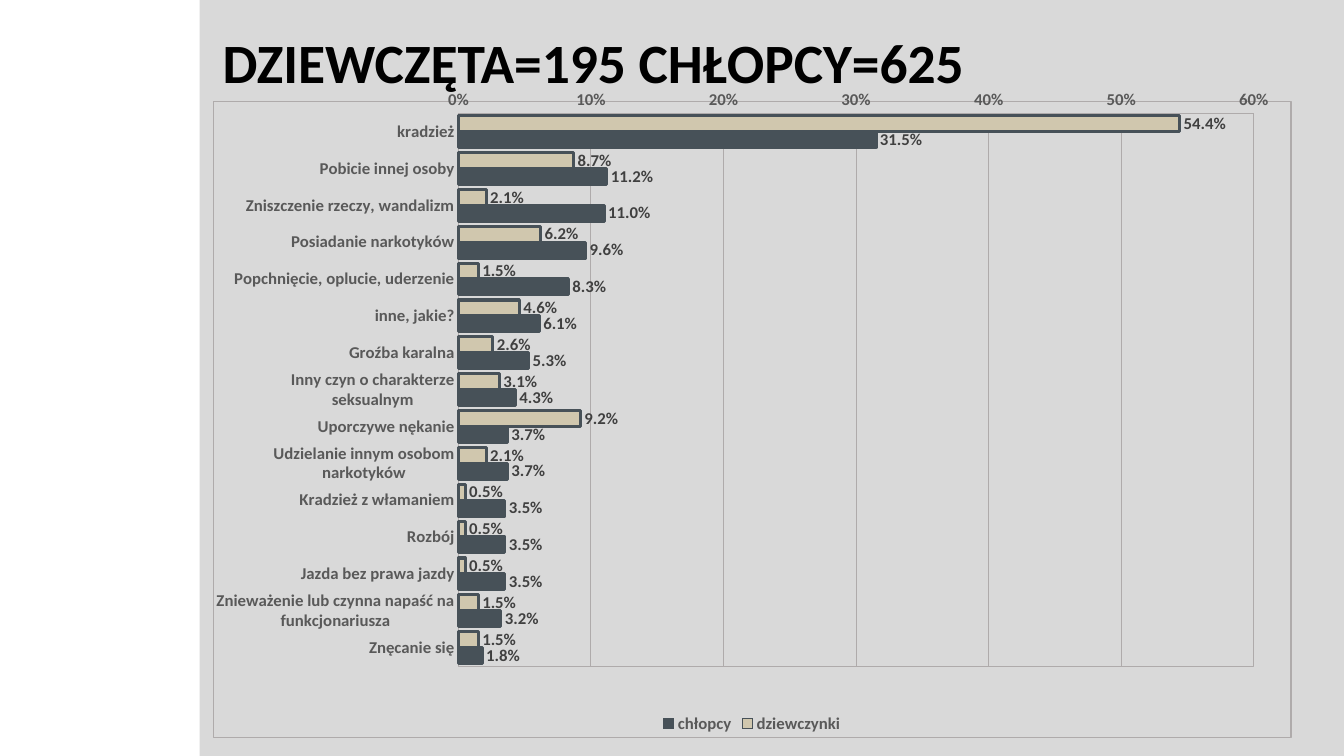
"""Build the slide comparing offences by girls and boys."""
import lxml.etree
import pptx
import pptx.chart.data
import pptx.dml.color
import pptx.enum.chart
import pptx.enum.shapes
import pptx.enum.text
import pptx.oxml
import pptx.oxml.ns
import pptx.util

Inches = pptx.util.Inches
Pt = pptx.util.Pt
FONT = "Calibri"
GRID, GREY, DARK, SAND = "AFABAB", "595959", "475158", "D0C7AE"
OFFENCES = [
    ("kradzież", 0.544, 0.315),
    ("Pobicie innej osoby", 0.087, 0.112),
    ("Zniszczenie rzeczy, wandalizm", 0.021, 0.11),
    ("Posiadanie narkotyków", 0.062, 0.096),
    ("Popchnięcie, oplucie, uderzenie", 0.015, 0.083),
    ("inne, jakie?", 0.046, 0.061),
    ("Groźba karalna", 0.026, 0.053),
    ("Inny czyn o charakterze seksualnym", 0.031, 0.043),
    ("Uporczywe nękanie", 0.092, 0.037),
    ("Udzielanie innym osobom narkotyków", 0.021, 0.037),
    ("Kradzież z włamaniem", 0.005, 0.035),
    ("Rozbój", 0.005, 0.035),
    ("Jazda bez prawa jazdy", 0.005, 0.035),
    ("Znieważenie lub czynna napaść na funkcjonariusza", 0.015, 0.032),
    ("Znęcanie się", 0.015, 0.018),
]


def rgb(color):
    """Return the colour for a hex string."""
    return pptx.dml.color.RGBColor.from_string(color)


def set_font(font, size, color):
    """Apply the bold slide font."""
    font.name = FONT
    font.size = Pt(size)
    font.bold = True
    font.color.rgb = rgb(color)


def set_line(line, color, width):
    """Apply a solid line."""
    line.color.rgb = rgb(color)
    line.width = Pt(width)


def add_panel(s):
    """Add the grey panel right of the white margin."""
    sp = s.shapes.add_shape(pptx.enum.shapes.MSO_SHAPE.RECTANGLE,
                            Inches(1.98), Inches(-0.02), Inches(11.35), Inches(7.52))
    sp.shadow.inherit = False
    sp.fill.solid()
    sp.fill.fore_color.rgb = rgb("D9D9D9")
    sp.line.fill.background()


def add_title(s, text):
    """Add the heading with the group sizes."""
    sp = s.shapes.add_textbox(Inches(2.11), Inches(0.4), Inches(10.31), Inches(0.49))
    tf = sp.text_frame
    tf.word_wrap = True
    tf.vertical_anchor = pptx.enum.text.MSO_ANCHOR.MIDDLE
    tf.text = text
    p = tf.paragraphs[0]
    p.line_spacing = 0.9
    set_font(p.runs[0].font, 39.6, "000000")


def border_xml():
    """Return shape properties with no fill and a thin border."""
    return pptx.oxml.parse_xml(
        f'<c:spPr {pptx.oxml.ns.nsdecls("c", "a")}><a:noFill/><a:ln w="{Pt(0.75)}">'
        f'<a:solidFill><a:srgbClr val="{GRID}"/></a:solidFill></a:ln></c:spPr>')


def frame_chart(chart):
    """Border the chart and place its plot area."""
    chart.element.xpath("c:chart")[0].addnext(border_xml())
    plot_area = chart.element.xpath("c:chart/c:plotArea")[0]
    for old in plot_area.xpath("c:layout"):
        plot_area.remove(old)
    layout = pptx.oxml.parse_xml(
        f'<c:layout {pptx.oxml.ns.nsdecls("c")}><c:manualLayout/></c:layout>')
    settings = [("layoutTarget", "inner"), ("xMode", "edge"), ("yMode", "edge"),
                ("x", "0.2275"), ("y", "0.019"), ("w", "0.738"), ("h", "0.869")]
    for tag, value in settings:
        lxml.etree.SubElement(layout[0], pptx.oxml.ns.qn(f"c:{tag}")).set("val", value)
    plot_area.insert(0, layout)
    plot_area.append(border_xml())


def style_axes(chart):
    """Format both axes and the gridlines."""
    for axis in (chart.category_axis, chart.value_axis):
        axis.major_tick_mark = axis.minor_tick_mark = pptx.enum.chart.XL_TICK_MARK.NONE
        set_font(axis.tick_labels.font, 12, GREY)
        set_line(axis.format.line, GRID, 0.75)
    chart.category_axis.reverse_order = True
    chart.category_axis.crosses = pptx.enum.chart.XL_AXIS_CROSSES.MAXIMUM
    axis = chart.value_axis
    axis.minimum_scale, axis.maximum_scale, axis.major_unit = 0, 0.6, 0.1
    axis.tick_labels.number_format = "0%"
    axis.tick_labels.number_format_is_linked = False
    axis.has_major_gridlines = True
    set_line(axis.major_gridlines.format.line, GRID, 0.75)


def style_series(series, color):
    """Format the bars and value labels of one group."""
    series.format.fill.solid()
    series.format.fill.fore_color.rgb = rgb(color)
    set_line(series.format.line, DARK, 2.25)
    series.invert_if_negative = False
    labels = series.data_labels
    labels.show_value = True
    labels.number_format = "0.0%"
    labels.number_format_is_linked = False
    labels.position = pptx.enum.chart.XL_LABEL_POSITION.OUTSIDE_END
    set_font(labels.font, 12, "404040")


def add_offence_chart(s):
    """Add the clustered bars of offences by group."""
    names, girls, boys = zip(*OFFENCES)
    data = pptx.chart.data.CategoryChartData(number_format="0.0%")
    data.categories = names
    data.add_series("dziewczynki", girls)
    data.add_series("chłopcy", boys)
    chart = s.shapes.add_chart(pptx.enum.chart.XL_CHART_TYPE.BAR_CLUSTERED,
                               Inches(2.11), Inches(0.89), Inches(10.7), Inches(6.43),
                               data).chart
    set_font(chart.font, 12, "000000")
    chart.has_title = False
    chart.has_legend = True
    chart.legend.position = pptx.enum.chart.XL_LEGEND_POSITION.BOTTOM
    chart.legend.include_in_layout = False
    set_font(chart.legend.font, 12, GREY)
    plot = chart.plots[0]
    plot.gap_width = 33
    plot.overlap = 0
    plot.vary_by_categories = False
    for series, color in zip(plot.series, (SAND, DARK)):
        style_series(series, color)
    style_axes(chart)
    frame_chart(chart)


def main():
    """Build and save the slide."""
    prs = pptx.Presentation()
    prs.slide_width, prs.slide_height = Inches(13.33), Inches(7.5)
    s = prs.slides.add_slide(prs.slide_layouts[6])
    add_panel(s)
    add_title(s, "DZIEWCZĘTA=195 CHŁOPCY=625")
    add_offence_chart(s)
    prs.save("out.pptx")


if __name__ == "__main__":
    main()
